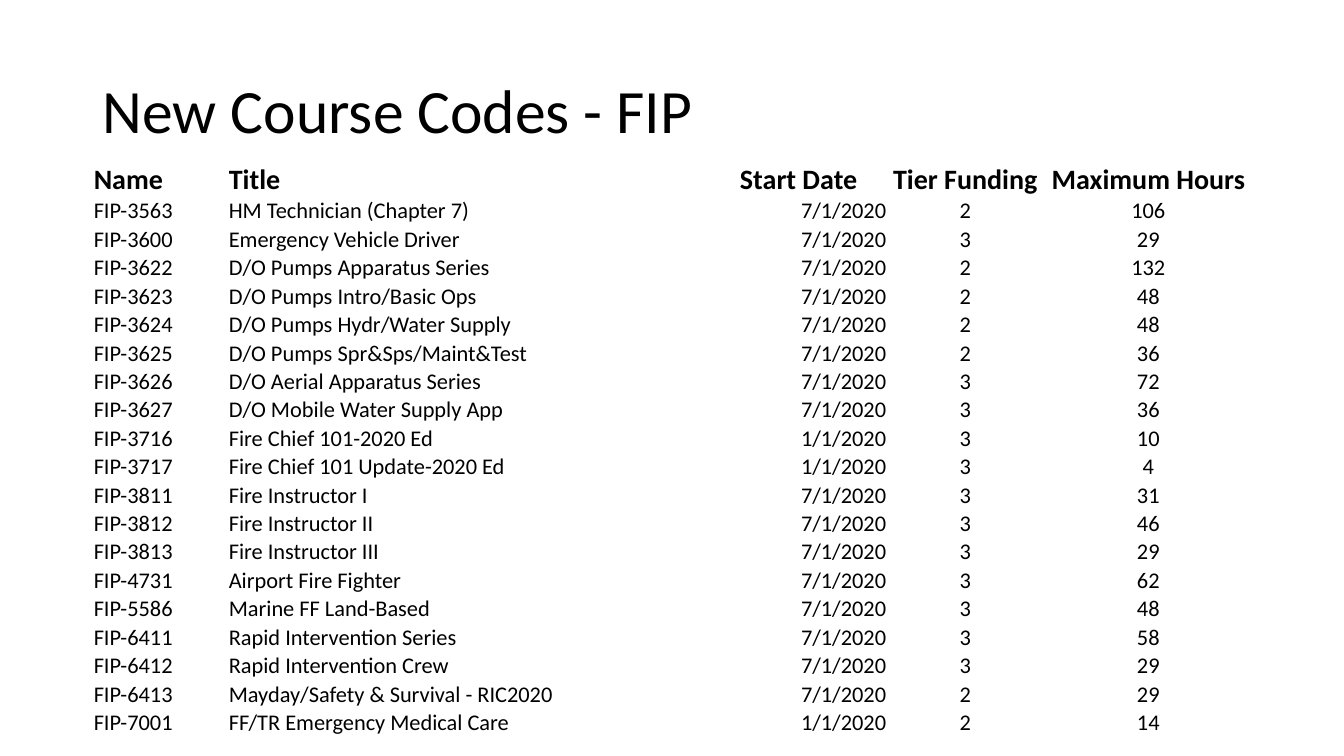
"""Build the slide that lists the new FIP course codes."""
from dataclasses import astuple, dataclass

from pptx import Presentation
from pptx.dml.color import RGBColor
from pptx.enum.text import MSO_ANCHOR, PP_ALIGN
from pptx.slide import Slide
from pptx.table import _Cell
from pptx.text.text import _Paragraph
from pptx.util import Inches, Pt

LEFT, CENTER, RIGHT = PP_ALIGN.LEFT, PP_ALIGN.CENTER, PP_ALIGN.RIGHT
MIDDLE, BOTTOM = MSO_ANCHOR.MIDDLE, MSO_ANCHOR.BOTTOM
TITLE_ONLY_LAYOUT = 5
FONT = "Calibri"
BLACK = "000000"
MARGIN = 0.92
CONTENT_WIDTH = 11.5
TABLE_TOP = 1.6
HEADER_HEIGHT = 0.3
COURSE_HEIGHT = 0.28


@dataclass(frozen=True)
class Column:
    heading: str
    width: float
    heading_align: PP_ALIGN
    align: PP_ALIGN


@dataclass(frozen=True)
class Course:
    name: str
    title: str
    tier: int
    hours: int
    start: str = "7/1/2020"

    def values(self) -> list[str]:
        name, title, tier, hours, start = astuple(self)
        return [name, title, start, str(tier), str(hours)]


COLUMNS = [
    Column("Name", 1.34, LEFT, LEFT),
    Column("Title", 5.07, LEFT, LEFT),
    Column("Start Date", 1.47, LEFT, RIGHT),
    Column("Tier Funding", 1.55, CENTER, CENTER),
    Column("Maximum Hours", 2.08, CENTER, CENTER),
]

COURSES = [
    Course("FIP-3563", "HM Technician (Chapter 7)", 2, 106),
    Course("FIP-3600", "Emergency Vehicle Driver", 3, 29),
    Course("FIP-3622", "D/O Pumps Apparatus Series", 2, 132),
    Course("FIP-3623", "D/O Pumps Intro/Basic Ops", 2, 48),
    Course("FIP-3624", "D/O Pumps Hydr/Water Supply", 2, 48),
    Course("FIP-3625", "D/O Pumps Spr&Sps/Maint&Test", 2, 36),
    Course("FIP-3626", "D/O Aerial Apparatus Series", 3, 72),
    Course("FIP-3627", "D/O Mobile Water Supply App", 3, 36),
    Course("FIP-3716", "Fire Chief 101-2020 Ed", 3, 10, "1/1/2020"),
    Course("FIP-3717", "Fire Chief 101 Update-2020 Ed", 3, 4, "1/1/2020"),
    Course("FIP-3811", "Fire Instructor I", 3, 31),
    Course("FIP-3812", "Fire Instructor II", 3, 46),
    Course("FIP-3813", "Fire Instructor III", 3, 29),
    Course("FIP-4731", "Airport Fire Fighter", 3, 62),
    Course("FIP-5586", "Marine FF Land-Based", 3, 48),
    Course("FIP-6411", "Rapid Intervention Series", 3, 58),
    Course("FIP-6412", "Rapid Intervention Crew", 3, 29),
    Course("FIP-6413", "Mayday/Safety & Survival - RIC2020", 2, 29),
    Course("FIP-7001", "FF/TR Emergency Medical Care", 2, 14, "1/1/2020"),
]


def color(hex_code: str) -> RGBColor:
    return RGBColor.from_string(hex_code)


def format_paragraph(paragraph: _Paragraph, size: float, align: PP_ALIGN, bold: bool = False) -> None:
    paragraph.alignment = align
    for run in paragraph.runs:
        run.font.name = FONT
        run.font.size = Pt(size)
        run.font.bold = bold
        run.font.color.rgb = color(BLACK)


def add_title(slide: Slide, wording: str) -> None:
    title = slide.shapes.title
    title.left, title.top = Inches(MARGIN), Inches(0.4)
    title.width, title.height = Inches(CONTENT_WIDTH), Inches(1.45)
    title.text_frame.text = wording
    title.text_frame.word_wrap = True
    title.text_frame.vertical_anchor = MIDDLE
    heading = title.text_frame.paragraphs[0]
    heading.line_spacing = 0.9
    format_paragraph(heading, 44, LEFT)


def fill_cell(cell: _Cell, wording: str, size: float, align: PP_ALIGN, bold: bool) -> None:
    cell.fill.background()
    cell.vertical_anchor = BOTTOM
    cell.margin_left = cell.margin_right = cell.margin_top = Inches(0.01)
    cell.margin_bottom = Inches(0)
    cell.text_frame.text = wording
    format_paragraph(cell.text_frame.paragraphs[0], size, align, bold)


def add_course_table(slide: Slide, columns: list[Column], courses: list[Course]) -> None:
    height = HEADER_HEIGHT + COURSE_HEIGHT * len(courses)
    table = slide.shapes.add_table(
        len(courses) + 1, len(columns),
        Inches(MARGIN), Inches(TABLE_TOP), Inches(CONTENT_WIDTH), Inches(height),
    ).table
    table.first_row = table.horz_banding = False
    for row_index, row in enumerate(table.rows):
        row.height = Inches(COURSE_HEIGHT if row_index else HEADER_HEIGHT)
    for column_index, column in enumerate(columns):
        table.columns[column_index].width = Inches(column.width)
        fill_cell(table.cell(0, column_index), column.heading, 20, column.heading_align, True)
        for row_index, course in enumerate(courses, start=1):
            wording = course.values()[column_index]
            fill_cell(table.cell(row_index, column_index), wording, 16, column.align, False)


def main() -> None:
    presentation = Presentation()
    presentation.slide_width, presentation.slide_height = Inches(13.33), Inches(7.5)
    slide = presentation.slides.add_slide(presentation.slide_layouts[TITLE_ONLY_LAYOUT])
    add_title(slide, "New Course Codes - FIP")
    add_course_table(slide, COLUMNS, COURSES)
    presentation.save("out.pptx")


if __name__ == "__main__":
    main()
